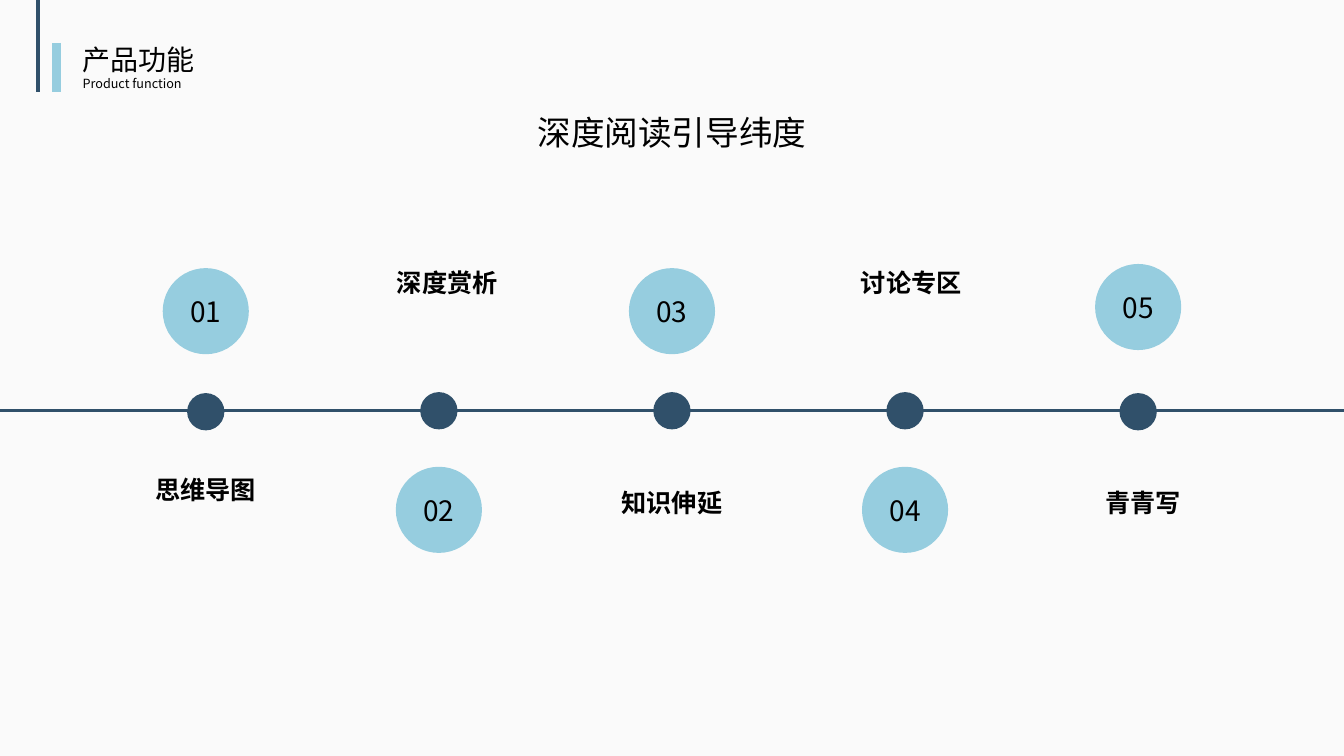
"""Build a slide with a five-stop timeline of product functions."""
from dataclasses import dataclass

from lxml.etree import SubElement
from pptx import Presentation
from pptx.dml.color import RGBColor
from pptx.enum.shapes import MSO_CONNECTOR, MSO_SHAPE
from pptx.enum.text import MSO_ANCHOR, MSO_AUTO_SIZE, PP_ALIGN
from pptx.oxml.ns import qn
from pptx.slide import Slide
from pptx.text.text import TextFrame, _Paragraph
from pptx.util import Emu, Inches, Pt

COLS, ROWS = 160, 90
CELL = Inches(1) / 12
HUES = {"back": "FAFAFA", "navy": "30506A", "sky": "96CDDF", "ink": "000000"}
SANS = "Noto Sans CJK SC"
PITCH = 27.75
AXIS = 48.9
DOT, DISC = 4.44, 10.25
WIDE, HIGH = 31, 6.6


@dataclass(frozen=True)
class Rule:
    start: tuple[float, float]
    end: tuple[float, float]
    hue: str
    weight: float


@dataclass(frozen=True)
class Stop:
    name: str
    disc: float
    label: float
    shift: float = 0
    drop: float = 0


RULES = [
    Rule((4.54, 0), (4.54, 10.9), "navy", 3),
    Rule((6.72, 5.1), (6.72, 10.9), "sky", 7),
    Rule((0, AXIS), (COLS, AXIS), "navy", 2),
]
STOPS = [
    Stop("思维导图", 37.05, 54.1, drop=0.12),
    Stop("深度赏析", 60.7, 29.4, shift=1),
    Stop("知识伸延", 37.05, 55.6),
    Stop("讨论专区", 60.7, 29.4, shift=0.75),
    Stop("青青写", 36.55, 55.6, shift=0.6, drop=0.12),
]


def span(cells: float) -> Emu:
    """Turn grid cells into a length."""
    return Emu(round(cells * CELL))


def paint(hue: str) -> RGBColor:
    """Look up a colour by its name."""
    return RGBColor.from_string(HUES[hue])


def add_run(para: _Paragraph, text: str, size: float,
            bold: bool = False, face: str = SANS) -> None:
    """Add one styled run to a paragraph."""
    run = para.add_run()
    run.text = text
    font = run.font
    font.size, font.bold, font.name = Pt(size), bold, face
    font.color.rgb = paint("ink")
    SubElement(font._element, qn("a:ea"), typeface=SANS)


def add_rule(slide: Slide, rule: Rule) -> None:
    """Draw a straight line."""
    ends = [span(cells) for cells in rule.start + rule.end]
    line = slide.shapes.add_connector(MSO_CONNECTOR.STRAIGHT, *ends)
    line.line.color.rgb = paint(rule.hue)
    line.line.width = Pt(rule.weight)
    SubElement(line._element.spPr, qn("a:effectLst"))


def add_ball(slide: Slide, mid: float, row: float, size: float, hue: str) -> TextFrame:
    """Draw a circle about its centre and return its text frame."""
    box = [span(c) for c in (mid - size / 2, row - size / 2, size, size)]
    ball = slide.shapes.add_shape(MSO_SHAPE.OVAL, *box)
    ball.shadow.inherit = False
    ball.fill.solid()
    ball.fill.fore_color.rgb = paint(hue)
    ball.line.fill.background()
    return ball.text_frame


def add_text(slide: Slide, box: tuple[float, float, float, float], wrap: bool) -> TextFrame:
    """Add a text box and return its text frame."""
    frame = slide.shapes.add_textbox(*[span(c) for c in box]).text_frame
    frame.word_wrap = wrap
    return frame


def add_stop(slide: Slide, index: int, stop: Stop) -> None:
    """Draw one stop: its dot, its numbered disc and its label."""
    mid = COLS / 2 + (index - len(STOPS) // 2) * PITCH
    add_ball(slide, mid, AXIS + stop.drop, DOT, "navy")
    frame = add_ball(slide, mid, stop.disc, DISC, "sky")
    frame.vertical_anchor = MSO_ANCHOR.MIDDLE
    para = frame.paragraphs[0]
    para.alignment = PP_ALIGN.CENTER
    add_run(para, f"{index + 1:02}", 20)
    left = mid + stop.shift - WIDE / 2
    para = add_text(slide, (left, stop.label, WIDE, HIGH), True).paragraphs[0]
    para.alignment = PP_ALIGN.CENTER
    para.line_spacing = 1.5
    add_run(para, stop.name, 18, bold=True)


def set_title(slide: Slide) -> None:
    """Place the title and fill in its two lines."""
    title = slide.shapes.title
    title.left, title.top, title.width, title.height = [
        span(c) for c in (8.64, 4.44, 18.1, 7.1)]
    frame = title.text_frame
    frame.auto_size = MSO_AUTO_SIZE.NONE
    frame.vertical_anchor = MSO_ANCHOR.TOP
    frame.word_wrap = True
    for para, text, size in (
        (frame.paragraphs[0], "产品功能", 20),
        (frame.add_paragraph(), "Product function", 9),
    ):
        para.alignment = PP_ALIGN.JUSTIFY
        add_run(para, text, size)


def main() -> None:
    """Build and save the slide."""
    deck = Presentation()
    deck.slide_width, deck.slide_height = span(COLS), span(ROWS)
    slide = deck.slides.add_slide(deck.slide_layouts[5])
    slide.background.fill.solid()
    slide.background.fill.fore_color.rgb = paint("back")
    set_title(slide)
    for rule in RULES:
        add_rule(slide, rule)
    for index, stop in enumerate(STOPS):
        add_stop(slide, index, stop)
    head = add_text(slide, (62.8, 12.7, 34.4, 6), False)
    add_run(head.paragraphs[0], "深度阅读引导纬度", 24, face="Calibri")
    deck.save("out.pptx")


if __name__ == "__main__":
    main()
